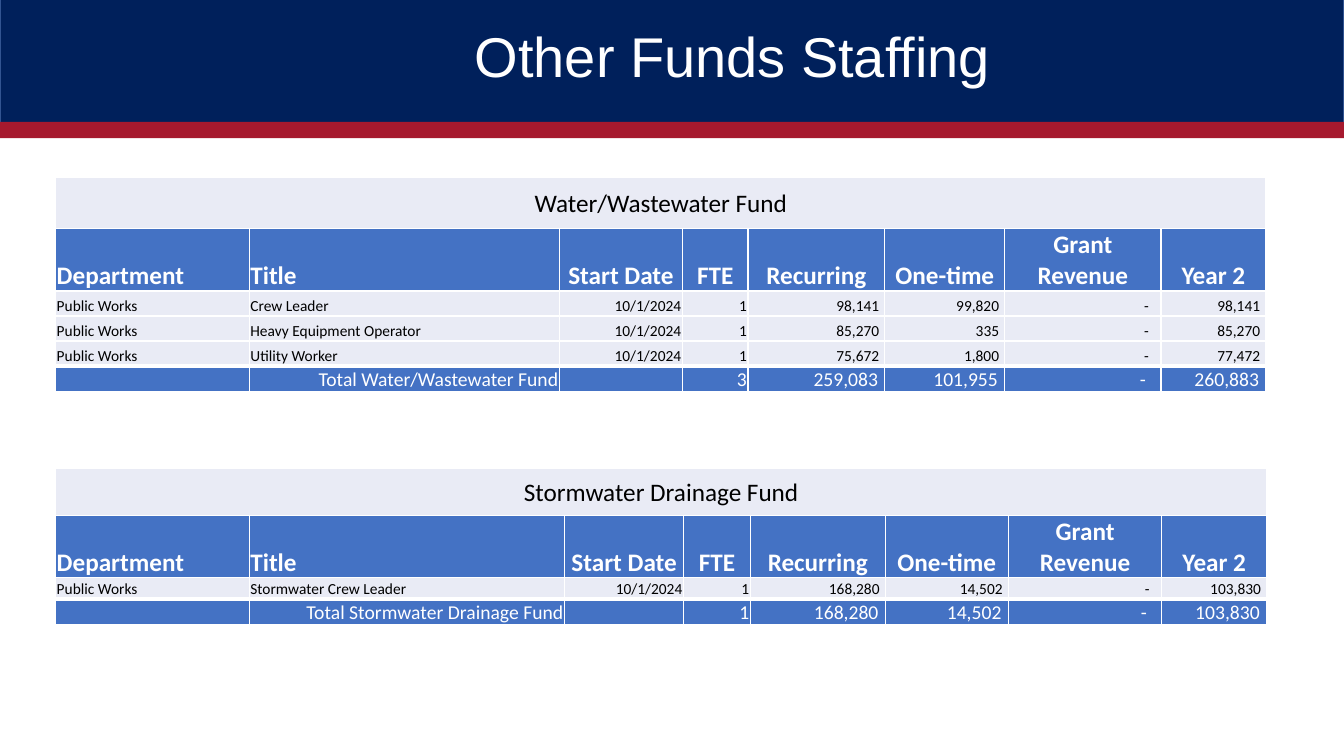
from dataclasses import dataclass

from lxml.etree import SubElement
from pptx import Presentation
from pptx.dml.color import RGBColor
from pptx.enum.shapes import MSO_SHAPE as Shape
from pptx.enum.text import MSO_ANCHOR as Anchor, PP_ALIGN as Align
from pptx.oxml.ns import qn
from pptx.util import Cm, Pt


@dataclass(frozen=True)
class Theme:
    navy: str = "00205B"
    navy_edge: str = "325491"
    red: str = "A6192E"
    blue: str = "4472C4"
    pale: str = "E9EBF5"
    white: str = "FFFFFF"
    black: str = "000000"
    title_font: str = "Arial"
    table_font: str = "Calibri"
    title_size: int = 40
    heading_size: int = 18
    body_size: int = 11
    total_size: int = 14


@dataclass(frozen=True)
class RowStyle:
    fill: str
    ink: str
    size: int
    bold: bool = False
    top_line: int = 1


THEME = Theme()
FUND_STYLE = RowStyle(THEME.pale, THEME.black, THEME.heading_size)
HEADER_STYLE = RowStyle(THEME.blue, THEME.white, THEME.heading_size, bold=True)
BODY_STYLE = RowStyle(THEME.pale, THEME.black, THEME.body_size)
TOTAL_STYLE = RowStyle(THEME.blue, THEME.white, THEME.total_size, top_line=3)

SLIDE_WIDTH, SLIDE_HEIGHT = 33.87, 19.05
HEADER_HEIGHT, TOTAL_HEIGHT = 1.57, 0.64
HEADERS = ["Department", "Title", "Start Date", "FTE",
           "Recurring", "One-time", "Grant Revenue", "Year 2"]
FIRST_AMOUNT = HEADERS.index("Recurring")
TITLE_COLUMN = HEADERS.index("Title")

WATER_ROWS = [
    ["Public Works", "Crew Leader", "10/1/2024", "1", "98,141", "99,820", "-", "98,141"],
    ["Public Works", "Heavy Equipment Operator", "10/1/2024", "1", "85,270", "335", "-", "85,270"],
    ["Public Works", "Utility Worker", "10/1/2024", "1", "75,672", "1,800", "-", "77,472"],
    ["", "Total Water/Wastewater Fund", "", "3", "259,083", "101,955", "-", "260,883"],
]
STORMWATER_ROWS = [
    ["Public Works", "Stormwater Crew Leader", "10/1/2024", "1", "168,280", "14,502", "-", "103,830"],
    ["", "Total Stormwater Drainage Fund", "", "1", "168,280", "14,502", "-", "103,830"],
]


def color(code):
    return RGBColor.from_string(code)


def add_bar(page, top, height, fill, edge=None):
    bar = page.shapes.add_shape(Shape.RECTANGLE, 0, Cm(top), Cm(SLIDE_WIDTH), Cm(height))
    bar.shadow.inherit = False
    bar.fill.solid()
    bar.fill.fore_color.rgb = color(fill)
    if edge:
        bar.line.color.rgb = color(edge)
        bar.line.width = Pt(1)
    else:
        bar.line.fill.background()


# Banner: navy and red bars with the title above them
def add_banner(page, title_text, left, top, width, height):
    add_bar(page, -0.03, 3.12, THEME.navy, THEME.navy_edge)
    add_bar(page, 3.07, 0.41, THEME.red)
    title = page.shapes.title
    title.left, title.top, title.width, title.height = Cm(left), Cm(top), Cm(width), Cm(height)
    title.element.getparent().append(title.element)
    frame = title.text_frame
    frame.text = title_text
    frame.vertical_anchor = Anchor.MIDDLE
    para = frame.paragraphs[0]
    para.alignment = Align.LEFT
    para.line_spacing = 0.9
    font = para.runs[0].font
    font.name, font.size = THEME.title_font, Pt(THEME.title_size)
    font.color.rgb = color(THEME.white)


def add_borders(cell, top_line):
    properties = cell._tc.get_or_add_tcPr()
    for side, width in (("L", 1), ("R", 1), ("T", top_line), ("B", 1)):
        line = SubElement(properties, qn(f"a:ln{side}"), w=str(Pt(width)))
        fill = SubElement(line, qn("a:solidFill"))
        SubElement(fill, qn("a:srgbClr"), val=THEME.white)


def format_cell(cell, text, style, align, anchor=Anchor.BOTTOM, right_gap=0.03):
    add_borders(cell, style.top_line)
    cell.fill.solid()
    cell.fill.fore_color.rgb = color(style.fill)
    cell.vertical_anchor = anchor
    cell.margin_left = cell.margin_top = Cm(0.03)
    cell.margin_right, cell.margin_bottom = Cm(right_gap), 0
    cell.text = text
    para = cell.text_frame.paragraphs[0]
    para.alignment = align
    for span in para.runs:
        span.font.name, span.font.size = THEME.table_font, Pt(style.size)
        span.font.bold = style.bold
        span.font.color.rgb = color(style.ink)
    if not text:
        # An empty cell keeps the row's type size
        SubElement(para._p, qn("a:endParaRPr"), sz=str(style.size * 100))


def value_layout(column, text, style):
    """Return the alignment and right gap of a body or total cell."""
    if column >= FIRST_AMOUNT:
        gap = 0.025 if text == "-" else 0.01
        return Align.RIGHT, round(gap * style.size + 0.03, 2)
    if column > TITLE_COLUMN or (column == TITLE_COLUMN and style is TOTAL_STYLE):
        return Align.RIGHT, 0.03
    return Align.LEFT, 0.03


# Fund table: fund name, column heads, positions and total
def add_fund_table(page, fund, rows, left, top, widths, fund_height, body_height):
    heights = [fund_height, HEADER_HEIGHT] + [body_height] * (len(rows) - 1) + [TOTAL_HEIGHT]
    table = page.shapes.add_table(len(heights), len(HEADERS), Cm(left), Cm(top),
                                  Cm(sum(widths)), Cm(sum(heights))).table
    table.first_row = table.horz_banding = False
    for column, width in zip(table.columns, widths):
        column.width = Cm(width)
    for row, height in zip(table.rows, heights):
        row.height = Cm(height)

    table.cell(0, 0).merge(table.cell(0, len(HEADERS) - 1))
    format_cell(table.cell(0, 0), fund, FUND_STYLE, Align.CENTER, Anchor.MIDDLE)
    for column, text in enumerate(HEADERS):
        align = Align.LEFT if column <= TITLE_COLUMN else Align.CENTER
        format_cell(table.cell(1, column), text, HEADER_STYLE, align)
    for index, values in enumerate(rows):
        style = TOTAL_STYLE if index == len(rows) - 1 else BODY_STYLE
        for column, text in enumerate(values):
            align, gap = value_layout(column, text, style)
            format_cell(table.cell(index + 2, column), text, style, align, right_gap=gap)


def main():
    deck = Presentation()
    deck.slide_width, deck.slide_height = Cm(SLIDE_WIDTH), Cm(SLIDE_HEIGHT)
    page = deck.slides.add_slide(deck.slide_layouts.get_by_name("Title Only"))
    add_banner(page, "Other Funds Staffing", 11.71, 0.4, 15.49, 2.21)
    add_fund_table(page, "Water/Wastewater Fund", WATER_ROWS, 1.4, 4.48,
                   [4.88, 7.82, 3.1, 1.65, 3.45, 3.02, 3.94, 2.64], 1.27, 0.63)
    add_fund_table(page, "Stormwater Drainage Fund", STORMWATER_ROWS, 1.4, 11.81,
                   [4.88, 7.95, 3, 1.68, 3.4, 3.1, 3.87, 2.64], 1.17, 0.53)
    deck.save("out.pptx")


if __name__ == "__main__":
    main()
